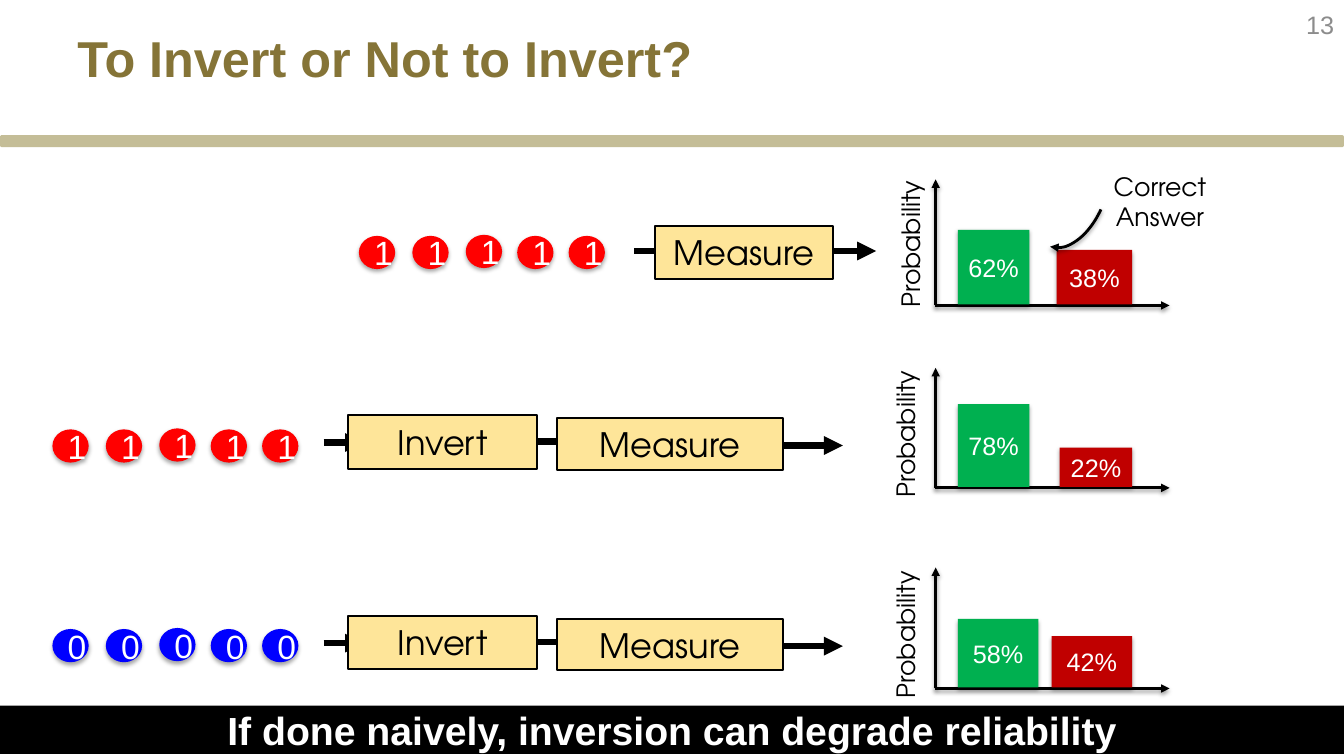
from dataclasses import dataclass

from lxml import etree
from pptx import Presentation
from pptx.dml import color as dml
from pptx.enum import shapes, text
from pptx.oxml import ns
from pptx.util import Inches, Pt

HUES = {
    "black": "000000", "white": "FFFFFF", "gold": "857437", "sand": "C4BD97",
    "cream": "FEE599", "red": "FF0000", "blue": "0000FF", "green": "00B050",
    "wine": "C00000", "gray": "8C8C8C",
}
SANS, ROUND = "Arial", "TeX Gyre Adventor"
KIND, ALIGN = shapes.MSO_SHAPE, text.PP_ALIGN
TOP, MID = text.MSO_ANCHOR.TOP, text.MSO_ANCHOR.MIDDLE


@dataclass
class Arrow:
    x: float
    end: float
    rise: float


@dataclass
class Block:
    label: str
    x: float
    rise: float
    w: float
    h: float


@dataclass
class Bar:
    label: str
    hue: str
    x: float
    w: float
    h: float


@dataclass
class Row:
    """One circuit and its chart; each rise is measured up from base."""
    base: float
    bit: str
    hue: str
    start: float
    lift: float
    arrows: list[Arrow]
    blocks: list[Block]
    bars: list[Bar]
    peak: float
    tag: tuple[float, float, float]


PATH = [Arrow(3.21, 3.61, 0.45), Arrow(5.32, 5.72, 0.46), Arrow(7.76, 8.36, 0.42)]
STEPS = [Block("Measure", 5.52, 0.69, 2.25, 0.51), Block("Invert", 3.45, 0.72, 1.88, 0.53)]
ROWS = [
    Row(4.84, "1", "red", 0.52, 0.58, PATH, STEPS,
        [Bar("22%", "wine", 10.51, 0.72, 0.39), Bar("78%", "green", 9.5, 0.71, 0.82)],
        1.19, (8.19, 0.8, 1.59)),
    Row(3.03, "1", "red", 3.56, 0.69,
        [Arrow(6.29, 6.69, 0.54), Arrow(8.27, 8.69, 0.54)],
        [Block("Measure", 6.5, 0.79, 1.76, 0.53)],
        [Bar("38%", "wine", 10.48, 0.75, 0.54), Bar("62%", "green", 9.5, 0.71, 0.74)],
        1.25, (8.1, 1.01, 1.86)),
    Row(6.83, "0", "blue", 0.52, 0.59, PATH, STEPS,
        [Bar("42%", "wine", 10.43, 0.8, 0.51), Bar("58%", "green", 9.5, 0.8, 0.68)],
        1.2, (8.19, 0.8, 1.59)),
]
BITS = [(0, 0), (0.53, 0), (1.06, 0.01), (1.57, 0), (2.08, 0)]


def rgb(hue: str) -> dml.RGBColor:
    return dml.RGBColor.from_string(HUES[hue])


def write(shape, words: str, *, size: float, hue: str = "black", font: str = SANS,
          bold: bool = False, align=ALIGN.CENTER, anchor=MID) -> None:
    frame = shape.text_frame
    frame.word_wrap = True
    frame.vertical_anchor = anchor
    para = frame.paragraphs[0]
    para.alignment = align
    run = para.add_run()
    run.text = words
    run.font.size, run.font.name, run.font.bold = Pt(size), font, bold
    run.font.color.rgb = rgb(hue)


def shade(shape, alpha: int = 0, dist: float = 1.8) -> None:
    """Replace the theme shadow: none, or a soft one straight below."""
    props = shape._element.spPr
    list_ = props.find(ns.qn("a:effectLst"))
    if list_ is None:
        list_ = etree.SubElement(props, ns.qn("a:effectLst"))
    if alpha:
        drop = etree.SubElement(list_, ns.qn("a:outerShdw"), blurRad=str(Pt(3.1)),
                                dist=str(Pt(dist)), dir="5400000", rotWithShape="0")
        tone = etree.SubElement(drop, ns.qn("a:srgbClr"), val=HUES["black"])
        etree.SubElement(tone, ns.qn("a:alpha"), val=str(alpha * 1000))


def stroke(shape, width: float, head: bool = False) -> None:
    shape.line.color.rgb = rgb("black")
    shape.line.width = Pt(width)
    if head:
        line = shape._element.spPr.find(ns.qn("a:ln"))
        etree.SubElement(line, ns.qn("a:tailEnd"), type="triangle")


def draw(canvas, kind, x: float, y: float, w: float, h: float, *, fill: str = "",
         line: float = 0, head: bool = False, alpha: int = 0, dist: float = 1.8):
    shape = canvas.add_shape(kind, Inches(x), Inches(y), Inches(w), Inches(h))
    if fill:
        shape.fill.solid()
        shape.fill.fore_color.rgb = rgb(fill)
    else:
        shape.fill.background()
    if line:
        stroke(shape, line, head)
    else:
        shape.line.fill.background()
    shape.shadow.inherit = False
    shade(shape, alpha, dist)
    return shape


def point(canvas, x: float, y: float, end_x: float, end_y: float, width: float,
          alpha: int = 0) -> None:
    arrow = canvas.add_connector(shapes.MSO_CONNECTOR.STRAIGHT, Inches(x), Inches(y),
                                 Inches(end_x), Inches(end_y))
    stroke(arrow, width, head=True)
    shade(arrow, alpha, 1.6)


def label(canvas, words: str, x: float, y: float, w: float, h: float, *,
          turn: float = 0, **style) -> None:
    box = canvas.add_textbox(Inches(x), Inches(y), Inches(w), Inches(h))
    box.rotation = turn
    write(box, words, **style)


def add_row(canvas, row: Row) -> None:
    # Circuit
    for arrow in row.arrows:
        y = row.base - arrow.rise
        point(canvas, arrow.x, y, arrow.end, y, 4.5)
    for block in row.blocks:
        box = draw(canvas, KIND.RECTANGLE, block.x, row.base - block.rise,
                   block.w, block.h, fill="cream", line=1.5)
        write(box, block.label, size=24, font=ROUND)
    for step, up in BITS:
        dot = draw(canvas, KIND.OVAL, row.start + step, row.base - row.lift - up,
                   0.36, 0.33, fill=row.hue, alpha=35)
        write(dot, row.bit, size=24, hue="white")
    # Axes and bars
    point(canvas, 9.28, row.base, 9.28, row.base - row.peak, 2, alpha=38)
    point(canvas, 9.27, row.base, 11.6, row.base, 2, alpha=38)
    for bar in row.bars:
        box = draw(canvas, KIND.RECTANGLE, bar.x, row.base - 0.01 - bar.h,
                   bar.w, bar.h, fill=bar.hue, alpha=35)
        write(box, bar.label, size=18, hue="white")
    x, rise, w = row.tag
    label(canvas, "Probability", x, row.base - rise, w, 0.4, turn=270,
          size=18, font=ROUND, align=ALIGN.LEFT, anchor=TOP)


def main() -> None:
    deck = Presentation()
    deck.slide_width, deck.slide_height = Inches(13.33), Inches(7.5)
    canvas = deck.slides.add_slide(deck.slide_layouts[6]).shapes

    # Header
    draw(canvas, KIND.ROUNDED_RECTANGLE, 0, 1.34, 13.33, 0.12, fill="sand")
    label(canvas, "To Invert or Not to Invert?", 0.67, 0.22, 9.92, 1.25, size=36,
          hue="gold", bold=True, align=ALIGN.LEFT, anchor=TOP)

    # Circuits with their charts
    for row in ROWS:
        add_row(canvas.add_group_shape().shapes, row)

    # Callout
    label(canvas, "Correct Answer", 10.84, 1.65, 1.33, 0.71, size=18, font=ROUND, anchor=TOP)
    curve = draw(canvas, KIND.ARC, 9.87, 1.33, 1.44, 0.84, line=2, head=True,
                 alpha=38, dist=1.6)
    curve.adjustments[0], curve.adjustments[1] = 181.07, 0.53
    curve.rotation = 103.2

    # Footer and page number
    strip = draw(canvas, KIND.ROUNDED_RECTANGLE, 0, 7, 13.33, 0.48, fill="black")
    strip.adjustments[0] = 0
    write(strip, "If done naively, inversion can degrade reliability", size=28,
          hue="white", bold=True)
    label(canvas, "13", 12.8, 0, 0.53, 0.48, size=18, hue="gray", align=ALIGN.RIGHT)
    deck.save("out.pptx")


if __name__ == "__main__":
    main()
